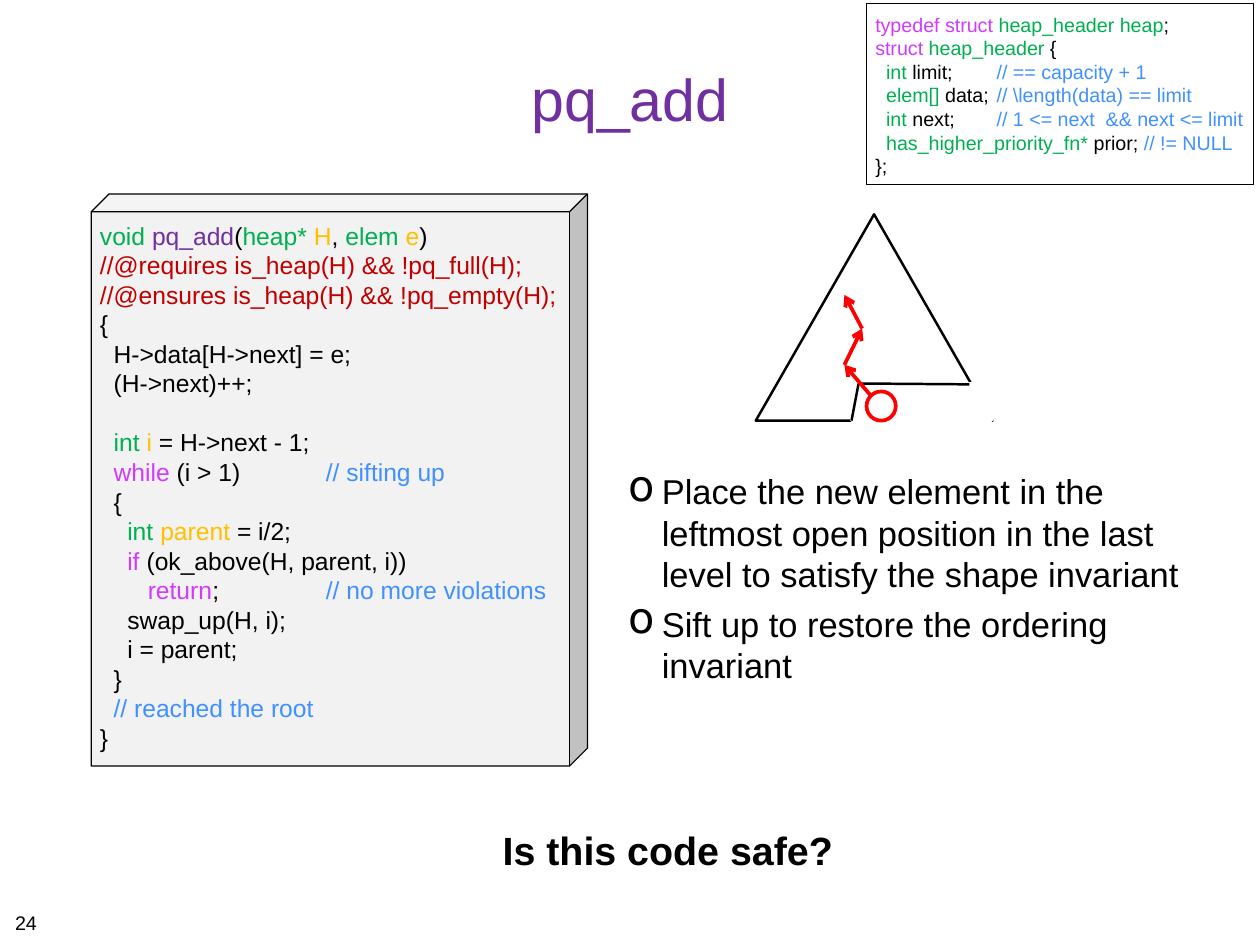
import pptx
import pptx.util
import pptx.dml.color
import pptx.enum.shapes
import pptx.enum.text
import pptx.oxml
import pptx.oxml.ns

Inches = pptx.util.Inches
Pt = pptx.util.Pt
RGBColor = pptx.dml.color.RGBColor
Shape = pptx.enum.shapes.MSO_SHAPE
Align = pptx.enum.text.PP_ALIGN
Anchor = pptx.enum.text.MSO_ANCHOR

BLACK = RGBColor(0x00, 0x00, 0x00)
WHITE = RGBColor(0xFF, 0xFF, 0xFF)
RED = RGBColor(0xFF, 0x00, 0x00)
PANEL = RGBColor(0xF2, 0xF2, 0xF2)
TYPE = RGBColor(0x00, 0xB0, 0x50)
FUNCTION = RGBColor(0x70, 0x30, 0xA0)
VARIABLE = RGBColor(0xFF, 0xC0, 0x00)
CONTRACT = RGBColor(0xC0, 0x00, 0x00)
KEYWORD = RGBColor(0xD0, 0x3B, 0xFF)
COMMENT = RGBColor(0x40, 0x91, 0xFF)

STRUCT_CODE = [
    [("typedef struct ", KEYWORD), ("heap_header heap", TYPE), (";", BLACK)],
    [("struct ", KEYWORD), ("heap_header ", TYPE), ("{", BLACK)],
    [("  int", TYPE), (" limit; \t", BLACK), ("// == capacity + 1", COMMENT)],
    [("  elem[] ", TYPE), ("data;\t", BLACK), ("// \\length(data) == limit", COMMENT)],
    [("  int", TYPE), (" next;\t", BLACK), ("// 1 <= next  && next <= limit", COMMENT)],
    [("  has_higher_priority_fn* ", TYPE), ("prior;", BLACK), (" // != NULL", COMMENT)],
    [("};", BLACK)],
]
ADD_SETUP = [
    [("void ", TYPE), ("pq_add", FUNCTION), ("(", BLACK), ("heap* ", TYPE), ("H", VARIABLE),
     (", ", BLACK), ("elem ", TYPE), ("e", VARIABLE), (")", BLACK)],
    [("//@requires is_heap(H) && !pq_full(H);", CONTRACT)],
    [("//@ensures is_heap(H) && !pq_empty(H);", CONTRACT)],
    [("{", BLACK)],
    [("  H->data[H->next] = e;", BLACK)],
    [("  (H->next)++;", BLACK)],
]
ADD_LOOP = [
    [("  int ", TYPE), ("i ", VARIABLE), ("= H->next - 1;", BLACK)],
    [("  while ", KEYWORD), ("(i > 1)\t", BLACK), ("\t// sifting up", COMMENT)],
    [("  {", BLACK)],
    [("    int ", TYPE), ("parent", VARIABLE), (" = i/2;", BLACK)],
    [("    if ", KEYWORD), ("(ok_above(H, parent, i))", BLACK)],
    [("       return", KEYWORD), ("; \t\t", BLACK), ("// no more violations", COMMENT)],
    [("    swap_up(H, i);", BLACK)],
    [("    i = parent;", BLACK)],
    [("  }", BLACK)],
    [("  // reached the root", COMMENT)],
    [("}", BLACK)],
]
STEPS = [
    "Place the new element in the leftmost open position in the last level "
    "to satisfy the shape invariant",
    "Sift up to restore the ordering invariant",
]


def add_span(para, text, size, color=BLACK, bold=False):
    span = para.add_run()
    span.text = text
    span.font.name = "Arial"
    span.font.size = Pt(size)
    span.font.color.rgb = color
    span.font.bold = bold


def add_xml(parent, tag, **attributes):
    child = pptx.oxml.parse_xml(f"<a:{tag} {pptx.oxml.ns.nsdecls('a')}/>")
    for name, value in attributes.items():
        child.set(name, str(value))
    parent.append(child)
    return child


def set_frame(frame, insets, wrap):
    """Insets run left, top, right, bottom."""
    frame.word_wrap = wrap
    frame.vertical_anchor = Anchor.TOP
    frame.margin_left, frame.margin_top, frame.margin_right, frame.margin_bottom = map(Inches, insets)
    return frame


def next_para(frame):
    first = frame.paragraphs[0]
    return frame.add_paragraph() if first.runs else first


def add_outline(page, kind, place, width, line=BLACK, fill=None):
    shape = page.shapes.add_shape(kind, *map(Inches, place))
    shape.shadow.inherit = False
    if fill is None:
        shape.fill.background()
    else:
        shape.fill.solid()
        shape.fill.fore_color.rgb = fill
    shape.line.color.rgb = line
    shape.line.width = Pt(width)
    return shape


def add_line(page, start, end, color, width, arrow=False):
    line = page.shapes.add_connector(
        pptx.enum.shapes.MSO_CONNECTOR.STRAIGHT, *map(Inches, start + end))
    line.line.color.rgb = color
    line.line.width = Pt(width)
    if arrow:
        add_xml(line.line._get_or_add_ln(), "tailEnd", type="arrow")
    add_xml(line._element.spPr, "effectLst")


def write_code(shape, lines, size, tabs):
    frame = set_frame(shape.text_frame, (0.1, 0.1, 0.06, 0.06), False)
    for spans in lines:
        para = next_para(frame)
        para.alignment = Align.LEFT
        stops = add_xml(para._p.get_or_add_pPr(), "tabLst")
        for tab in tabs:
            add_xml(stops, "tab", pos=Inches(tab), algn="l")
        for text, color in spans:
            add_span(para, text, size, color)
    return frame


def add_title(page, text):
    title = page.shapes.title
    title.left, title.top, title.width, title.height = map(Inches, (1.04, 0.28, 12.14, 1.64))
    frame = set_frame(title.text_frame, (0.06,) * 4, True)
    frame.vertical_anchor = Anchor.MIDDLE
    frame.paragraphs[0].alignment = Align.CENTER
    add_span(frame.paragraphs[0], text, 48, FUNCTION)


def add_steps(page):
    box = page.shapes.add_textbox(*map(Inches, (6.53, 5.25, 6.83, 4.46)))
    frame = set_frame(box.text_frame, (0.06,) * 4, True)
    for step in STEPS:
        para = next_para(frame)
        para.level = 1
        para.space_before = Pt(7)
        properties = para._p.get_or_add_pPr()
        properties.set("marL", str(Inches(0.88)))
        properties.set("indent", str(Inches(-0.38)))
        add_xml(add_xml(properties, "buClr"), "srgbClr", val=BLACK)
        add_xml(properties, "buSzPct", val=125000)
        add_xml(properties, "buChar", char="o")
        add_span(para, step, 28)


def add_label(page, text, place, insets, size, align, bold=False):
    box = page.shapes.add_textbox(*map(Inches, place))
    frame = set_frame(box.text_frame, insets, False)
    frame.paragraphs[0].alignment = align
    add_span(frame.paragraphs[0], text, size, bold=bold)


def add_heap_drawing(page):
    """Heap with a gap in its last level and the sift-up path of the new element."""
    add_outline(page, Shape.ISOSCELES_TRIANGLE, (8.53, 2.42, 2.67, 2.33), 2)
    add_outline(page, Shape.RECTANGLE, (9.61, 4.33, 1.58, 0.42), 2, WHITE, WHITE)
    gap_corner = (9.69, 4.33)
    for end in ((10.94, 4.34), (9.61, 4.75)):
        add_line(page, gap_corner, end, BLACK, 2)
    add_outline(page, Shape.OVAL, (9.78, 4.42, 0.33, 0.33), 3, RED)
    sift_path = [(9.83, 4.47), (9.53, 4.12), (9.73, 3.71), (9.53, 3.33)]
    for start, end in zip(sift_path, sift_path[1:]):
        add_line(page, start, end, RED, 3, arrow=True)


def main():
    deck = pptx.Presentation()
    deck.slide_width, deck.slide_height = Inches(14.22), Inches(10.67)
    page = deck.slides.add_slide(deck.slide_layouts[5])
    add_title(page, "pq_add")
    add_steps(page)

    cube = add_outline(page, Shape.CUBE, (1.03, 2.19, 5.6, 6.46), 1, fill=PANEL)
    cube.adjustments[0] = 0.036
    frame = write_code(cube, ADD_SETUP + ADD_LOOP, 20, (1.7, 2.55))
    frame.paragraphs[len(ADD_SETUP)].space_before = Pt(24)

    add_heap_drawing(page)
    struct = add_outline(page, Shape.RECTANGLE, (9.78, 0.04, 4.37, 2.04), 1)
    write_code(struct, STRUCT_CODE, 16, (1.37,))
    add_label(page, "Is this code safe?", (5.57, 9.28, 3.94, 0.64),
              (0.1, 0.05, 0.1, 0.05), 32, Align.CENTER, bold=True)
    add_label(page, "24", (0.11, 10.23, 0.37, 0.35), (0.06,) * 4, 16, Align.LEFT)
    deck.save("out.pptx")


if __name__ == "__main__":
    main()
